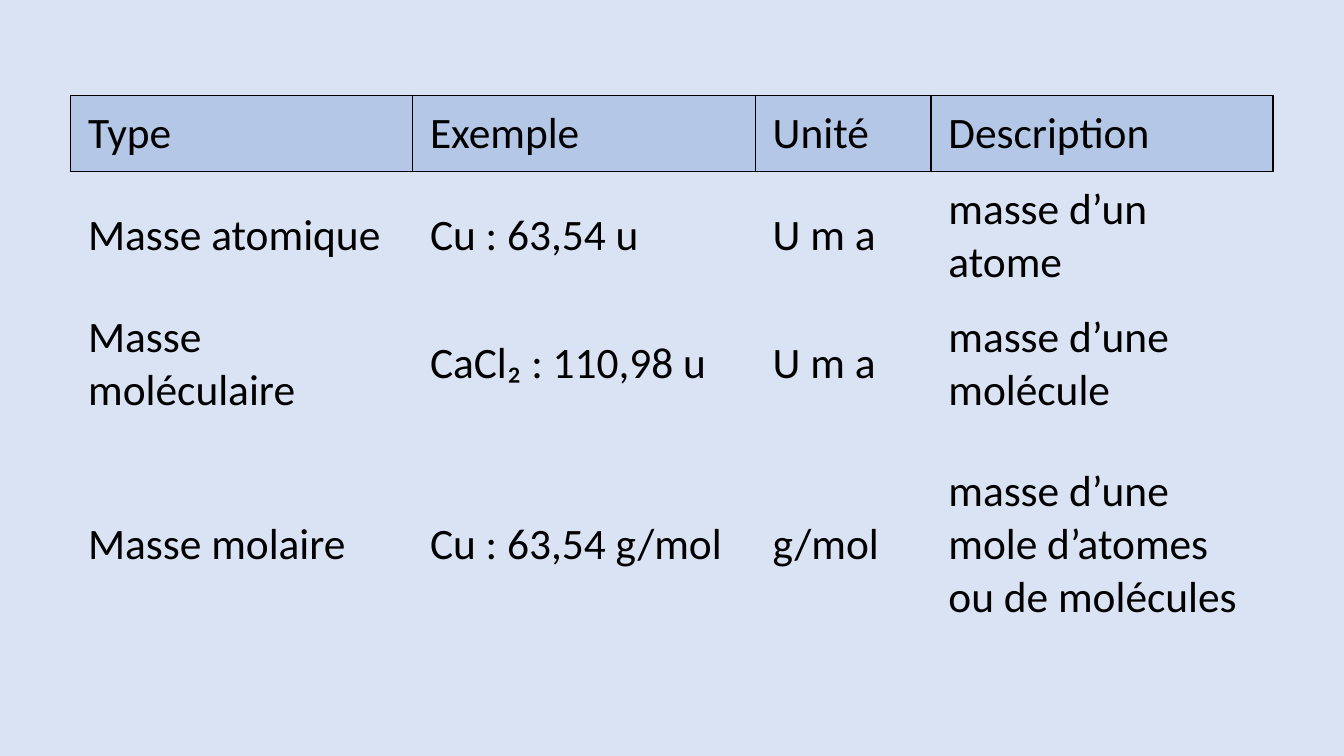
import pptx
import pptx.dml.color
import pptx.enum.text
import pptx.oxml.ns
import pptx.util
from lxml import etree

Pt = pptx.util.Pt
RGBColor = pptx.dml.color.RGBColor

# Content
ROWS = [
    ("Type", "Exemple", "Unité", "Description"),
    ("Masse atomique", "Cu : 63,54 u", "U m a", "masse d’un atome"),
    ("Masse moléculaire", "CaCl₂ : 110,98 u", "U m a", "masse d’une molécule"),
    ("Masse molaire", "Cu : 63,54 g/mol", "g/mol",
     "masse d’une mole d’atomes ou de molécules"),
]

# Layout in points
TABLE_LEFT, TABLE_TOP = 50.6, 68
COLUMN_WIDTHS = (244.2, 244.8, 125.5, 244.2)
ROW_HEIGHTS = (54.6, 91.6, 91.6, 166.2)
MARGIN_X, MARGIN_Y = 12.4, 6.2
FONT_NAME, FONT_SIZE = "Calibri", 31

# Colours
BACKGROUND = RGBColor(0xDA, 0xE3, 0xF3)
HEADER_FILL = RGBColor(0xB4, 0xC7, 0xE7)
BLACK = RGBColor(0, 0, 0)


def set_borders(cell, black_sides):
    """Draw black lines on the given sides and none on the others."""
    qn = pptx.oxml.ns.qn
    properties = cell._tc.get_or_add_tcPr()
    for side in "LRTB":
        line = etree.SubElement(properties, qn(f"a:ln{side}"), w=str(Pt(1)))
        if side in black_sides:
            fill = etree.SubElement(line, qn("a:solidFill"))
            etree.SubElement(fill, qn("a:srgbClr"), val=str(BLACK))
        else:
            etree.SubElement(line, qn("a:noFill"))


# Slide
presentation = pptx.Presentation()
presentation.slide_width, presentation.slide_height = Pt(960), Pt(540)
slide = presentation.slides.add_slide(presentation.slide_layouts[6])
slide.background.fill.solid()
slide.background.fill.fore_color.rgb = BACKGROUND

# Table grid
table = slide.shapes.add_table(
    len(ROWS), len(COLUMN_WIDTHS), Pt(TABLE_LEFT), Pt(TABLE_TOP),
    Pt(sum(COLUMN_WIDTHS)), Pt(sum(ROW_HEIGHTS))).table
table.first_row = True
table.horz_banding = False
for column, width in zip(table.columns, COLUMN_WIDTHS):
    column.width = Pt(width)
for row, height in zip(table.rows, ROW_HEIGHTS):
    row.height = Pt(height)

# Cells
for row_index, texts in enumerate(ROWS):
    for column_index, text in enumerate(texts):
        cell = table.cell(row_index, column_index)
        cell.text = text
        cell.margin_left = cell.margin_right = Pt(MARGIN_X)
        cell.margin_top = cell.margin_bottom = Pt(MARGIN_Y)
        cell.vertical_anchor = pptx.enum.text.MSO_ANCHOR.MIDDLE
        set_borders(cell, {0: "LRTB", 1: "T"}.get(row_index, ""))
        if row_index == 0:
            cell.fill.solid()
            cell.fill.fore_color.rgb = HEADER_FILL
        else:
            cell.fill.background()
        font = cell.text_frame.paragraphs[0].font
        font.name, font.size, font.bold = FONT_NAME, Pt(FONT_SIZE), False
        font.color.rgb = BLACK

presentation.save("out.pptx")
